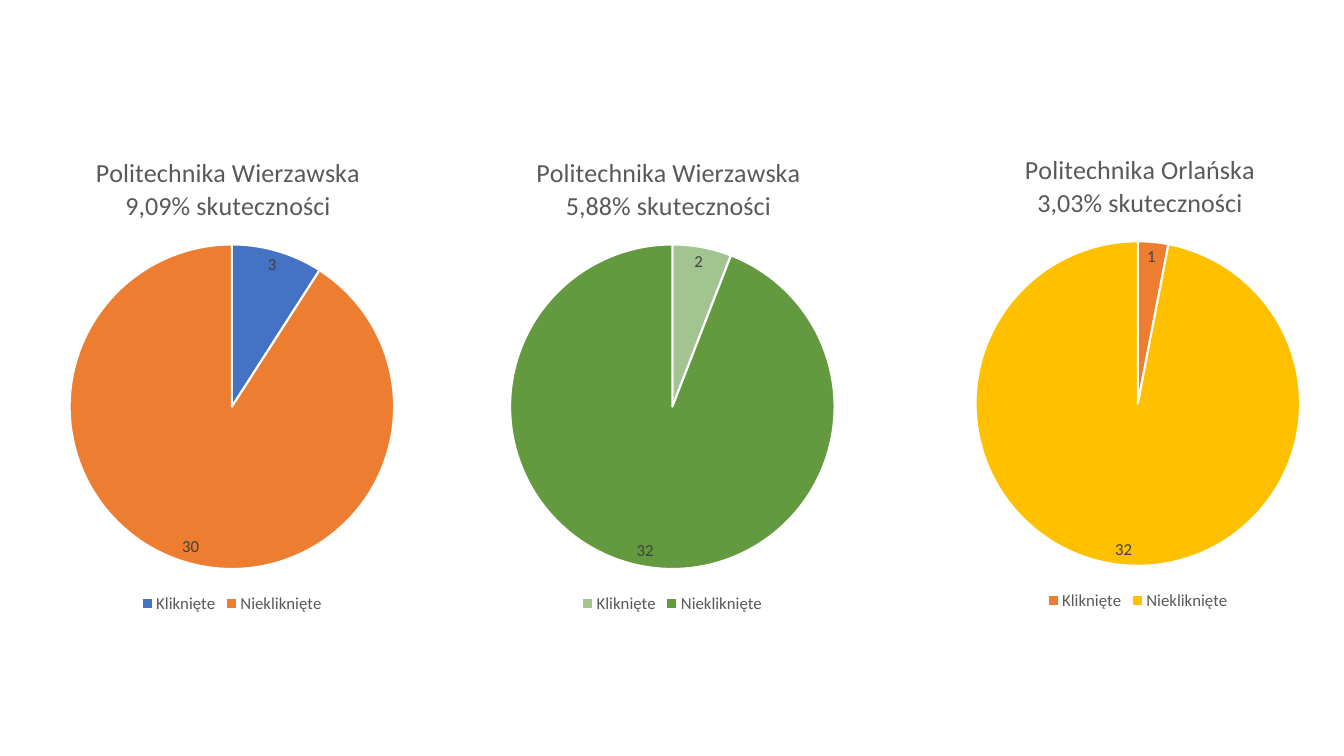
"""Build a slide with three pie charts of click effectiveness."""
from lxml import etree
from pptx import Presentation
from pptx.chart.data import CategoryChartData
from pptx.dml.color import RGBColor
from pptx.enum.chart import XL_CHART_TYPE, XL_LABEL_POSITION, XL_LEGEND_POSITION
from pptx.oxml.ns import qn
from pptx.util import Cm, Pt

WHITE = RGBColor(0xFF, 0xFF, 0xFF)
BLACK = RGBColor(0x00, 0x00, 0x00)
GREY = RGBColor(0x59, 0x59, 0x59)
DARK = RGBColor(0x40, 0x40, 0x40)
BLUE = RGBColor(0x44, 0x72, 0xC4)
ORANGE = RGBColor(0xED, 0x7D, 0x31)
LIGHT_GREEN = RGBColor(0xA1, 0xC4, 0x90)
GREEN = RGBColor(0x63, 0x9A, 0x3F)
YELLOW = RGBColor(0xFF, 0xC0, 0x00)

PIES = [
    (-8.76, 3.48, "Politechnika Wierzawska", "9,09% skuteczności", 0.38, (3, 30), (BLUE, ORANGE)),
    (2.34, 3.48, "Politechnika Wierzawska", "5,88% skuteczności", 0.38, (2, 32), (LIGHT_GREEN, GREEN)),
    (14.07, 3.4, "Politechnika Orlańska", "3,03% skuteczności", 0.4, (1, 32), (ORANGE, YELLOW)),
]


def set_font(font, size, color):
    for name, value in {"name": "Calibri", "size": Pt(size), "bold": False}.items():
        setattr(font, name, value)
    font.color.rgb = color


def set_layout(parent, index, values):
    for old in parent.findall(qn("c:layout")):
        parent.remove(old)
    layout = etree.Element(qn("c:layout"))
    manual = etree.SubElement(layout, qn("c:manualLayout"))
    for tag, value in values.items():
        etree.SubElement(manual, qn(f"c:{tag}")).set("val", str(value))
    parent.insert(index, layout)


prs = Presentation()
prs.slide_width, prs.slide_height = Cm(33.87), Cm(19.05)
s = prs.slides.add_slide(prs.slide_layouts[6])

for left, top, school, rate, title_x, values, colors in PIES:
    data = CategoryChartData()
    data.categories = ["Kliknięte", "Niekliknięte"]
    data.add_series("Series 1", values)
    chart = s.shapes.add_chart(
        XL_CHART_TYPE.PIE, Cm(left), Cm(top), Cm(29.21), Cm(12.09), data
    ).chart
    set_font(chart.font, 10, BLACK)

    tf = chart.chart_title.text_frame
    tf.text = f"{school}\n{rate}"
    for p in tf.paragraphs:
        set_font(p.runs[0].font, 18.6, GREY)
    set_layout(chart.chart_title._element, 1,
               {"xMode": "edge", "yMode": "edge", "x": title_x, "y": 0.03})
    chart.chart_title.include_in_layout = False

    chart.has_legend = True
    chart.legend.position = XL_LEGEND_POSITION.BOTTOM
    chart.legend.include_in_layout = False
    set_font(chart.legend.font, 12, GREY)

    plot = chart.plots[0]
    plot.vary_by_categories = True
    set_layout(plot._element.getparent(), 0,
               {"layoutTarget": "inner", "xMode": "edge", "yMode": "edge",
                "x": 0.36, "y": 0.22, "w": 0.28, "h": 0.68})
    for i, color in enumerate(colors):
        fmt = plot.series[0].points[i].format
        fmt.fill.solid()
        fmt.fill.fore_color.rgb = color
        fmt.line.color.rgb = WHITE
        fmt.line.width = Pt(1.5)

    labels = plot.series[0].data_labels
    labels.show_value = True
    labels.position = XL_LABEL_POSITION.BEST_FIT
    set_font(labels.font, 12, DARK)

prs.save("out.pptx")
